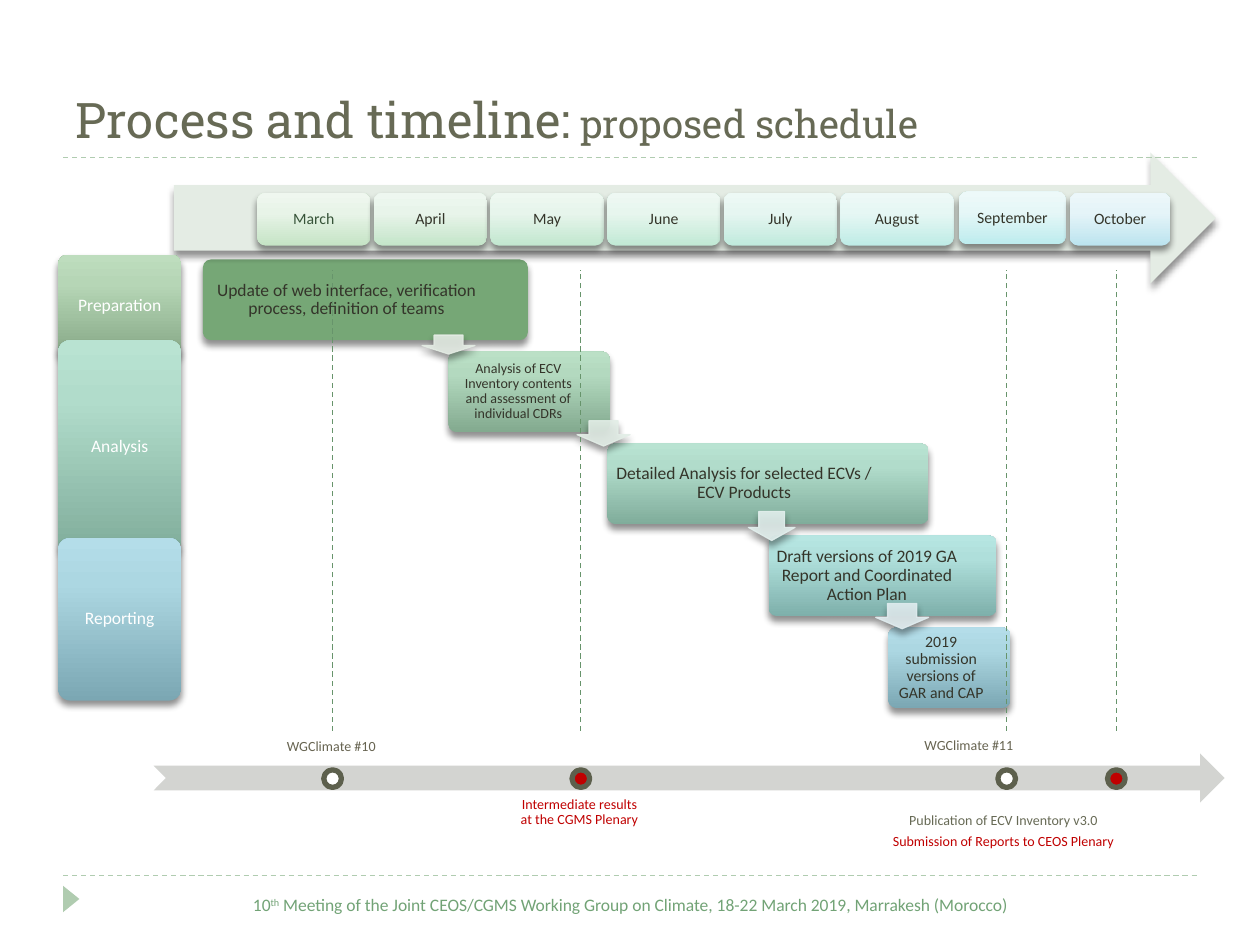
from copy import deepcopy

from lxml.etree import SubElement
from pptx import Presentation
from pptx.dml.color import RGBColor
from pptx.enum.dml import MSO_LINE
from pptx.enum.shapes import MSO_CONNECTOR, MSO_SHAPE
from pptx.enum.text import MSO_ANCHOR, MSO_AUTO_SIZE, PP_ALIGN
from pptx.oxml.ns import qn
from pptx.util import Inches, Pt

rgb = RGBColor.from_string
OLIVE = rgb("676A55")
LABEL = rgb("676451")
DARK = rgb("34352A")
RED = rgb("C00000")
WHITE = rgb("FFFFFF")
RING = rgb("5D604D")
GREY = rgb("D3D4D1")
PALE_GREEN = rgb("E4ECE4")
RULE_GREEN = rgb("B0CCB0")
DATE_GREEN = rgb("67946B")
FOOTER_GREEN = rgb("72A376")
MARCH_GREEN = rgb("375439")
UPDATE_GREEN = [rgb("76A776")]
# Gradients run from the bottom edge to the top edge
SAGE = [rgb("85A785"), rgb("B6D6B6"), rgb("BEDDBE")]
GREEN = [rgb("83AA8F"), rgb("B3D9BF"), rgb("BBE0C6")]
MINT = [rgb("80AD9B"), rgb("B1DCCB"), rgb("B9E3D2")]
TEAL = [rgb("7EB0AB"), rgb("AFDFDB"), rgb("B7E6E2")]
BLUE = [rgb("7BA7B3"), rgb("ACD7E2"), rgb("B4DDE9")]

prs = Presentation()
prs.slide_width, prs.slide_height = Inches(10), Inches(7.5)
slide = prs.slides.add_slide(prs.slide_layouts[5])
shapes = slide.shapes


def add_filled(kind, at, colours, middle=72, shadow=True):
    """Add a borderless shape; three colours make a vertical gradient."""
    shape = shapes.add_shape(kind, *[Inches(v) for v in at])
    shape.line.fill.background()
    shape.shadow.inherit = False
    if len(colours) == 1:
        shape.fill.solid()
        shape.fill.fore_color.rgb = colours[0]
    else:
        shape.fill.gradient()
        shape.fill.gradient_angle = 90
        stop_list = shape._element.spPr.find(".//" + qn("a:gsLst"))
        stop_list.append(deepcopy(stop_list[-1]))
        for stop, position, colour in zip(shape.fill.gradient_stops, (0, middle, 100), colours):
            stop.position = position / 100
            stop.color.rgb = colour
    if shadow:
        effects = shape._element.spPr.find(qn("a:effectLst"))
        outer = SubElement(effects, qn("a:outerShdw"), blurRad=str(Pt(4)), dist=str(Pt(3)),
                           dir="5400000", rotWithShape="0")
        black = SubElement(outer, qn("a:srgbClr"), val="000000")
        SubElement(black, qn("a:alpha"), val="43000")
    return shape


def write(shape, lines, size, anchor=MSO_ANCHOR.MIDDLE, inset=0.04, right=None):
    """Write (text, colour) lines, one centred paragraph each."""
    frame = shape.text_frame
    frame.word_wrap = True
    frame.vertical_anchor = anchor
    frame.margin_left = frame.margin_top = frame.margin_bottom = Inches(inset)
    frame.margin_right = Inches(inset if right is None else right)
    for i, (text, colour) in enumerate(lines):
        paragraph = frame.add_paragraph() if i else frame.paragraphs[0]
        paragraph.alignment = PP_ALIGN.CENTER
        paragraph.line_spacing = 0.9
        if i < len(lines) - 1:
            paragraph.space_after = Pt(3)
        run = paragraph.add_run()
        run.text = text
        run.font.name, run.font.size = "Calibri", Pt(size)
        run.font.color.rgb = colour


# Title
title = shapes.title
title.left, title.top, title.width, title.height = [Inches(v) for v in (0.5, 0.15, 9.15, 1.08)]
title.text_frame.vertical_anchor = MSO_ANCHOR.BOTTOM
title.text_frame.auto_size = MSO_AUTO_SIZE.NONE
heading = title.text_frame.paragraphs[0]
heading.alignment = PP_ALIGN.LEFT
for text, size in (("Process and timeline:", 28), (" proposed schedule", 22)):
    run = heading.add_run()
    run.text = text
    run.font.name, run.font.size = "Roboto Slab", Pt(size)
    run.font.color.rgb = OLIVE

# Footer
marker = add_filled(MSO_SHAPE.ISOSCELES_TRIANGLE, (0.46, 7.07, 0.21, 0.13), [RULE_GREEN],
                    shadow=False)
marker.rotation = 90
footer = shapes.add_textbox(Inches(0.59), Inches(7.05), Inches(8.82), Inches(0.4))
footer.text_frame.word_wrap = True
meeting = footer.text_frame.paragraphs[0]
meeting.alignment = PP_ALIGN.CENTER
for text, baseline in (
    ("10", 0),
    ("th", 30000),
    (" Meeting of the Joint CEOS/CGMS Working Group on Climate, "
     "18-22 March 2019, Marrakesh (Morocco)", 0),
):
    run = meeting.add_run()
    run.text = text
    run.font.name, run.font.size = "Calibri", Pt(10)
    run.font.color.rgb = FOOTER_GREEN
    if baseline:
        run._r.get_or_add_rPr().set("baseline", str(baseline))

# Tasks step down the slide: left, width, right inset, text size, colours, text
tasks = [
    (1.61, 2.58, 0.34, 10, UPDATE_GREEN,
     "Update of web interface, verification process, definition of teams"),
    (3.56, 1.28, 0.21, 8, GREEN,
     "Analysis of ECV Inventory contents and assessment of individual CDRs"),
    (4.82, 2.55, 0.42, 10, MINT, "Detailed Analysis for selected ECVs / ECV Products"),
    (6.10, 1.81, 0.29, 10, TEAL, "Draft versions of 2019 GA Report and Coordinated Action Plan"),
    (7.05, 0.97, 0.17, 9, BLUE, "2019 submission versions of GAR and CAP"),
]
for row, (left, width, right, size, colours, text) in enumerate(tasks):
    task = add_filled(MSO_SHAPE.ROUNDED_RECTANGLE, (left, 2.06 + 0.73 * row, width, 0.64), colours)
    task.adjustments[0] = 0.1
    write(task, [(text, DARK)], size, right=right)

for at, colour in (
    ((3.35, 2.66, 0.42, 0.15), PALE_GREEN),
    ((4.58, 3.34, 0.42, 0.20), rgb("E3EEE7")),
    ((5.94, 4.06, 0.37, 0.23), rgb("E2EFED")),
    ((6.95, 4.79, 0.42, 0.20), rgb("E1EDF0")),
):
    handover = add_filled(MSO_SHAPE.DOWN_ARROW, at, [colour])
    handover.adjustments[0], handover.adjustments[1] = 0.45, 0.45
    handover.adjustments[0] = 0.55
    handover.line.color.rgb = colour
    handover.line.width = Pt(0.75)
    for solid in handover._element.spPr.iter(qn("a:solidFill")):
        SubElement(solid[0], qn("a:alpha"), val="90000")

# Milestones
add_filled(MSO_SHAPE.NOTCHED_RIGHT_ARROW, (1.22, 5.98, 8.5, 0.39), [GREY], shadow=False)
milestones = [(2.64, WHITE), (4.61, RED), (7.99, WHITE), (8.86, RED)]
for x, colour in milestones:
    dot = add_filled(MSO_SHAPE.OVAL, (x - 0.07, 6.11, 0.14, 0.14), [colour], shadow=False)
    dot.line.color.rgb = RING
    dot.line.width = Pt(3)
for at, anchor, lines in (
    ((2.09, 5.80, 1.08, 0.25), MSO_ANCHOR.BOTTOM, [("WGClimate #10", LABEL)]),
    ((4.06, 6.27, 1.08, 0.40), MSO_ANCHOR.TOP,
     [("Intermediate results at the CGMS Plenary", RED)]),
    ((6.97, 6.25, 1.99, 0.55), MSO_ANCHOR.BOTTOM,
     [("Publication of ECV Inventory v3.0", OLIVE),
      ("Submission of Reports to CEOS Plenary", RED)]),
    ((7.15, 5.80, 1.08, 0.23), MSO_ANCHOR.TOP, [("WGClimate #11", LABEL)]),
):
    write(shapes.add_textbox(*[Inches(v) for v in at]), lines, 8, anchor, 0.06)

# Months
add_filled(MSO_SHAPE.RIGHT_ARROW, (1.38, 1.21, 8.27, 1.04), [PALE_GREEN])
month_step = (6.67 - 2.04) / 5
months = [
    ("March", "C5E4C5", "E8F4E8", "EFF7EF"),
    ("April", "C4E5C9", "E8F4EA", "EEF7F0"),
    ("May", "C2E7CF", "E7F5EC", "EEF8F1"),
    ("June", "C1E9D5", "E7F6EE", "EEF8F3"),
    ("July", "C0EADD", "E6F6F1", "EDF9F5"),
    ("August", "BFECE6", "E6F7F4", "EDF9F7"),
    ("September", "BDECEE", "E6F7F7", "EDF9F9"),
    ("October", "BCE4EF", "E5F4F8", "ECF7FA"),
]
narrow_months = {"September": (7.61, 1.52, 0.85, 0.42), "October": (8.49, 1.53, 0.8, 0.42)}
for i, (name, *stops) in enumerate(months):
    at = narrow_months.get(name, (2.04 + month_step * i, 1.53, 0.9, 0.42))
    month = add_filled(MSO_SHAPE.ROUNDED_RECTANGLE, at, [rgb(s) for s in stops], middle=62)
    write(month, [(name, MARCH_GREEN if name == "March" else DARK)], 9)

# Stages
for name, top, height, colours in (
    ("Preparation", 2.02, 0.82, SAGE),
    ("Analysis", 2.70, 1.69, MINT),
    ("Reporting", 4.27, 1.29, BLUE),
):
    stage = add_filled(MSO_SHAPE.ROUNDED_RECTANGLE, (0.46, top, 0.98, height), colours)
    stage.adjustments[0] = 0.1
    write(stage, [(name, WHITE)], 10)

# Dashed rules and date lines
dashes = [(0.5, y, 9.5, y, RULE_GREEN) for y in (6.95, 1.25)]
dashes += [(x, 5.8, x, 2.14, DATE_GREEN) for x, _ in milestones]
for *ends, colour in dashes:
    dash = shapes.add_connector(MSO_CONNECTOR.STRAIGHT, *[Inches(v) for v in ends])
    dash.line.color.rgb = colour
    dash.line.width = Pt(0.75)
    dash.line.dash_style = MSO_LINE.DASH
    SubElement(dash._element.spPr, qn("a:effectLst"))

prs.save("out.pptx")
